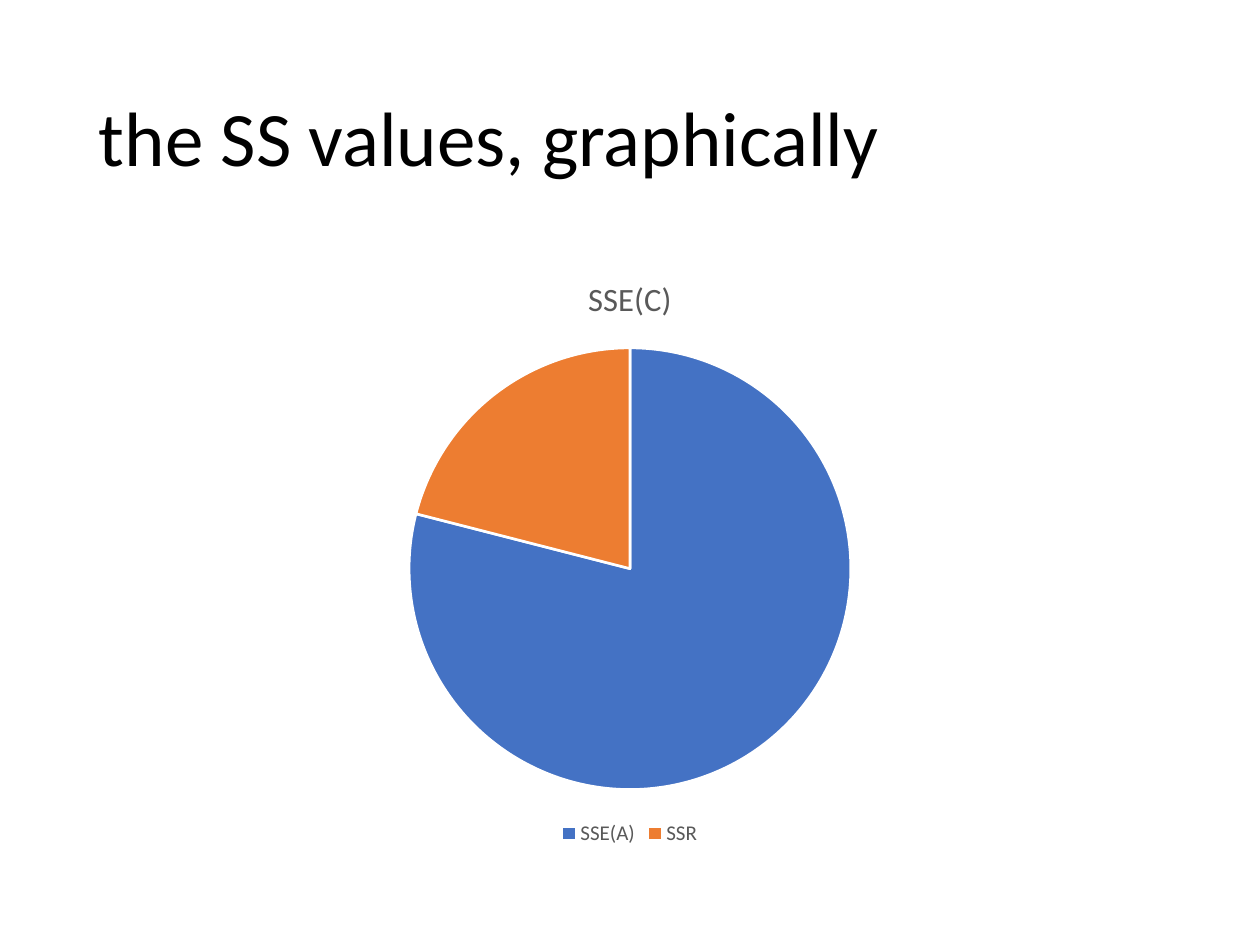
"""Build a slide showing the SS values as a pie chart."""
from pptx import Presentation
from pptx.chart.data import CategoryChartData
from pptx.dml.color import RGBColor
from pptx.enum import chart as ch, text
from pptx.util import Pt

COLORS = {"ink": "000000", "grey": "595959", "edge": "FFFFFF",
          "SSE(A)": "4472C4", "SSR": "ED7D31"}
SHARES = {"SSE(A)": 79, "SSR": 21}
LEFT, WIDTH = Pt(49.5), Pt(621)


def style(font, size, color):
    font.name = "Calibri"
    font.size = Pt(size)
    font.bold = False
    font.color.rgb = RGBColor.from_string(COLORS[color])


deck = Presentation()
deck.slide_width, deck.slide_height = Pt(720), Pt(540)
slide = deck.slides.add_slide(deck.slide_layouts[6])

heading = slide.shapes.add_textbox(LEFT, Pt(28.75), WIDTH, Pt(104.4)).text_frame
heading.word_wrap = True
heading.vertical_anchor = text.MSO_ANCHOR.MIDDLE
line = heading.paragraphs[0]
line.text = "the SS values, graphically"
line.line_spacing = 0.9
style(line.font, 44, "ink")

data = CategoryChartData()
data.categories = list(SHARES)
data.add_series("Series 1", list(SHARES.values()))
pie = slide.shapes.add_chart(
    ch.XL_CHART_TYPE.PIE, LEFT, Pt(143.75), WIDTH, Pt(342.6), data).chart
style(pie.font, 10, "ink")

pie.has_title = True
caption = pie.chart_title.text_frame.paragraphs[0]
caption.text = "SSE(C)"
style(caption.font, 18.6, "grey")
pie.chart_title.include_in_layout = False

pie.has_legend = True
pie.legend.position = ch.XL_LEGEND_POSITION.BOTTOM
pie.legend.include_in_layout = False
style(pie.legend.font, 12, "grey")

plot = pie.plots[0]
plot.vary_by_categories = True
for index, name in enumerate(SHARES):
    slice_format = plot.series[0].points[index].format
    slice_format.fill.solid()
    slice_format.fill.fore_color.rgb = RGBColor.from_string(COLORS[name])
    slice_format.line.color.rgb = RGBColor.from_string(COLORS["edge"])
    slice_format.line.width = Pt(1.5)

deck.save("out.pptx")
